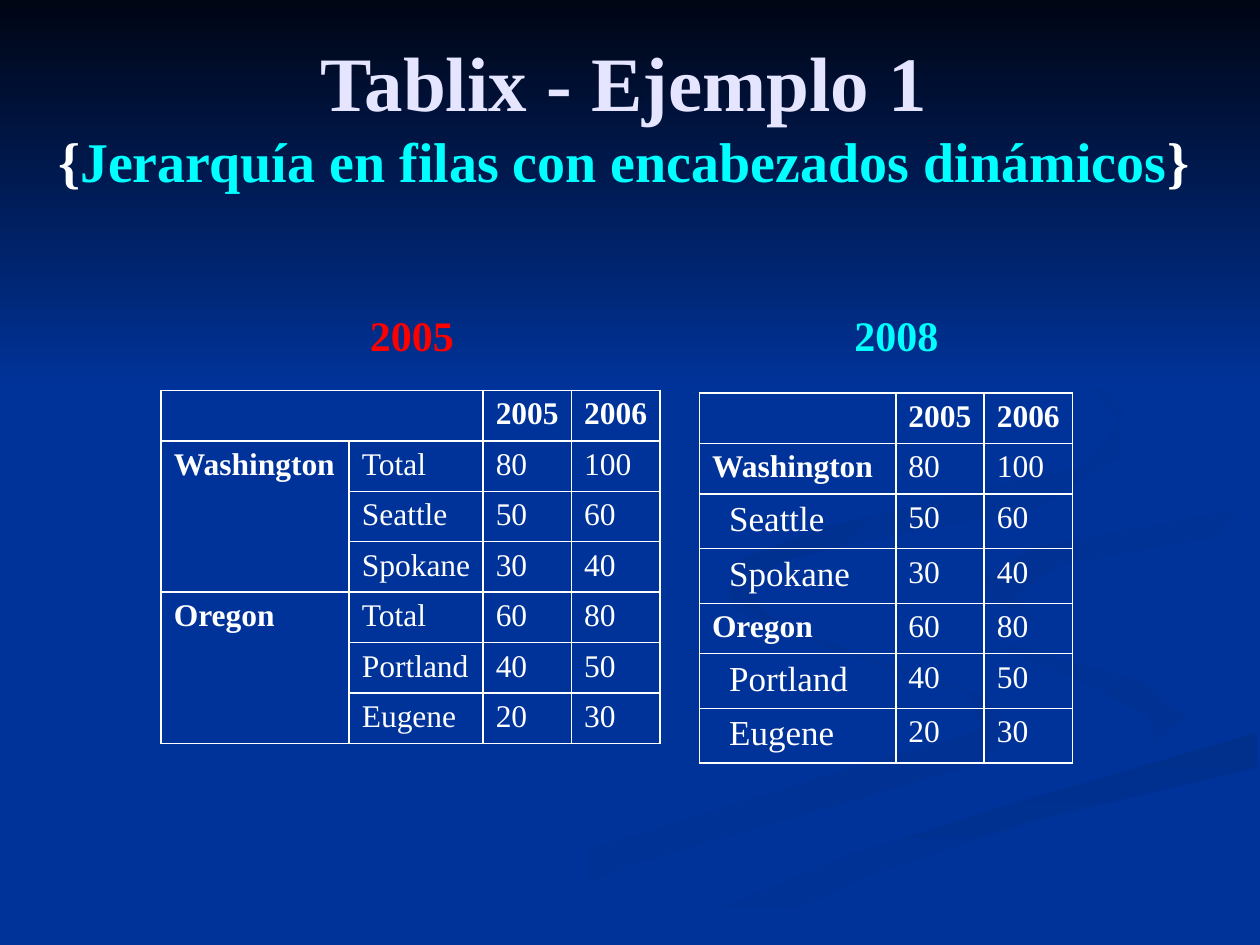
from lxml import etree
from pptx import Presentation
from pptx.dml.color import RGBColor
from pptx.enum.shapes import MSO_SHAPE
from pptx.enum.text import MSO_ANCHOR, PP_ALIGN
from pptx.oxml.ns import qn
from pptx.util import Cm, Pt

RECTANGLE = MSO_SHAPE.RECTANGLE
MIDDLE = MSO_ANCHOR.MIDDLE
CENTER = PP_ALIGN.CENTER

BLUE = RGBColor(0x00, 0x33, 0x99)
NIGHT = RGBColor(0x00, 0x05, 0x14)
SHADE = RGBColor(0x00, 0x31, 0x93)
DEEP_SHADE = RGBColor(0x00, 0x2F, 0x8C)
LAVENDER = RGBColor(0xE5, 0xE5, 0xFF)
WHITE = RGBColor(0xFF, 0xFF, 0xFF)
CYAN = RGBColor(0x00, 0xFF, 0xFF)
RED = RGBColor(0xFF, 0x00, 0x00)

FONT = "Times New Roman"
CURVE_UNIT = Cm(0.0254)


def add_text(paragraph, text, size=18, color=WHITE, bold=False, align=None):
    run = paragraph.add_run()
    run.text = text
    run.font.name = FONT
    run.font.size = Pt(size)
    run.font.bold = bold
    run.font.color.rgb = color
    if align is not None:
        paragraph.alignment = align


def paint(shape, first, last, angle):
    shape.shadow.inherit = False
    shape.line.fill.background()
    shape.fill.gradient()
    shape.fill.gradient_angle = (360 - angle) % 360  # clockwise angle
    for stop, color in zip(shape.fill.gradient_stops, (first, last)):
        stop.color.rgb = color


presentation = Presentation()
presentation.slide_width = Cm(25.4)
presentation.slide_height = Cm(19.05)
slide = presentation.slides.add_slide(presentation.slide_layouts[6])
slide.background.fill.solid()
slide.background.fill.fore_color.rgb = BLUE

# Background ribbons: first colour, last colour, angle, outline
ribbons = [
    (BLUE, SHADE, 0, [
        (781, 553), (682, 519), (594, 485), (575, 459), (581, 484), (654, 513),
        (770, 551), (780, 579), (579, 639), (417, 690), (300, 749), (361, 749),
        (499, 687), (780, 605), (800, 581)]),
    (BLUE, SHADE, 45, [
        (943, 570), (905, 540), (792, 509), (733, 483), (724, 464), (739, 494),
        (854, 539), (911, 567), (917, 585), (894, 605), (937, 586)]),
    (DEEP_SHADE, BLUE, 90, [
        (503, 749), (571, 749), (695, 692), (821, 651), (998, 609), (998, 581),
        (831, 629), (630, 693)]),
    (BLUE, BLUE, 0, [
        (725, 464), (759, 498), (905, 540), (943, 570), (892, 605), (663, 668),
        (477, 749), (503, 749), (696, 669), (999, 581), (999, 538), (832, 498),
        (781, 463), (822, 434), (999, 402), (999, 387), (788, 422)]),
    (SHADE, BLUE, 45, [
        (781, 460), (791, 478), (826, 496), (805, 472), (843, 448), (998, 420),
        (998, 402), (821, 434)]),
    (DEEP_SHADE, BLUE, 45, [
        (683, 430), (825, 402), (889, 362), (890, 324), (843, 275), (762, 233),
        (846, 279), (889, 335), (861, 370), (649, 420), (584, 446), (580, 474),
        (622, 500), (593, 470), (624, 444)]),
]
for first, last, angle, points in ribbons:
    builder = slide.shapes.build_freeform(*points[0], scale=CURVE_UNIT)
    builder.add_line_segments(points[1:], close=True)
    paint(builder.convert_to_shape(), first, last, angle)

# Dark fade at the top
fade = slide.shapes.add_shape(RECTANGLE, 0, 0, Cm(25.4), Cm(7.82))
paint(fade, NIGHT, BLUE, 90)

# Title
title = slide.shapes.add_textbox(Cm(0.58), Cm(0.76), Cm(24), Cm(3.07))
title.text_frame.word_wrap = True
title.text_frame.vertical_anchor = MIDDLE
paragraph = title.text_frame.paragraphs[0]
add_text(paragraph, "Tablix - Ejemplo 1", size=44, color=LAVENDER, bold=True, align=CENTER)
paragraph.add_line_break()
for text, color in [("{", WHITE), ("Jerarquía en filas con encabezados dinámicos", CYAN), ("}", WHITE)]:
    add_text(paragraph, text, size=32, color=color, bold=True)

# Both tables show the same figures: state, place, values
YEARS = ["2005", "2006"]
records = [
    ("Washington", "Total", "80", "100"),
    ("", "Seattle", "50", "60"),
    ("", "Spokane", "30", "40"),
    ("Oregon", "Total", "60", "80"),
    ("", "Portland", "40", "50"),
    ("", "Eugene", "20", "30"),
]
STATES = ("Washington", "Oregon")
nested_rows = [["", *YEARS]] + [[state or place, *values] for state, place, *values in records]
grouped_rows = [["", "", *YEARS]] + [list(record) for record in records]
nested_heights = [1.02] + [0.96 if record[0] else 1.04 for record in records]
grouped_heights = [0.96] * len(grouped_rows)

tables = [
    (14.1, 7.92, [3.96, 1.78, 1.78], nested_heights, nested_rows),
    (3.25, 7.87, [3.79, 2.7, 1.78, 1.78], grouped_heights, grouped_rows),
]
for left, top, widths, heights, rows in tables:
    table = slide.shapes.add_table(len(rows), len(widths), Cm(left), Cm(top),
                                   Cm(sum(widths)), Cm(sum(heights))).table
    table.first_row = table.horz_banding = False
    for column, width in zip(table.columns, widths):
        column.width = Cm(width)
    for row, height in zip(table.rows, heights):
        row.height = Cm(height)
    for row_index, values in enumerate(rows):
        for column_index, text in enumerate(values):
            cell = table.cell(row_index, column_index)
            # White borders on all sides
            properties = cell._tc.get_or_add_tcPr()
            for side in ("a:lnL", "a:lnR", "a:lnT", "a:lnB"):
                border = etree.SubElement(properties, qn(side), w=str(Pt(1)))
                solid = etree.SubElement(border, qn("a:solidFill"))
                etree.SubElement(solid, qn("a:srgbClr"), val=str(WHITE))
            cell.fill.background()
            if text:
                indented = column_index == 0 and text not in STATES
                if indented:
                    cell.margin_left = Cm(0.6)
                add_text(cell.text_frame.paragraphs[0], text, size=20 if indented else 18,
                         bold=row_index == 0 or text in STATES)

# Merged headings of the grouped table
table.cell(0, 0).merge(table.cell(0, 1))
for first_row in (1, 4):
    table.cell(first_row, 0).merge(table.cell(first_row + 2, 0))

# Version labels above the tables
for text, left, width, color in [("2005", 5.64, 5.33, RED), ("2008", 16.28, 3.58, CYAN)]:
    label = slide.shapes.add_textbox(Cm(left), Cm(6.12), Cm(width), Cm(1.27))
    label.text_frame.word_wrap = True
    add_text(label.text_frame.paragraphs[0], text, size=24, color=color, bold=True, align=CENTER)

presentation.save("out.pptx")
